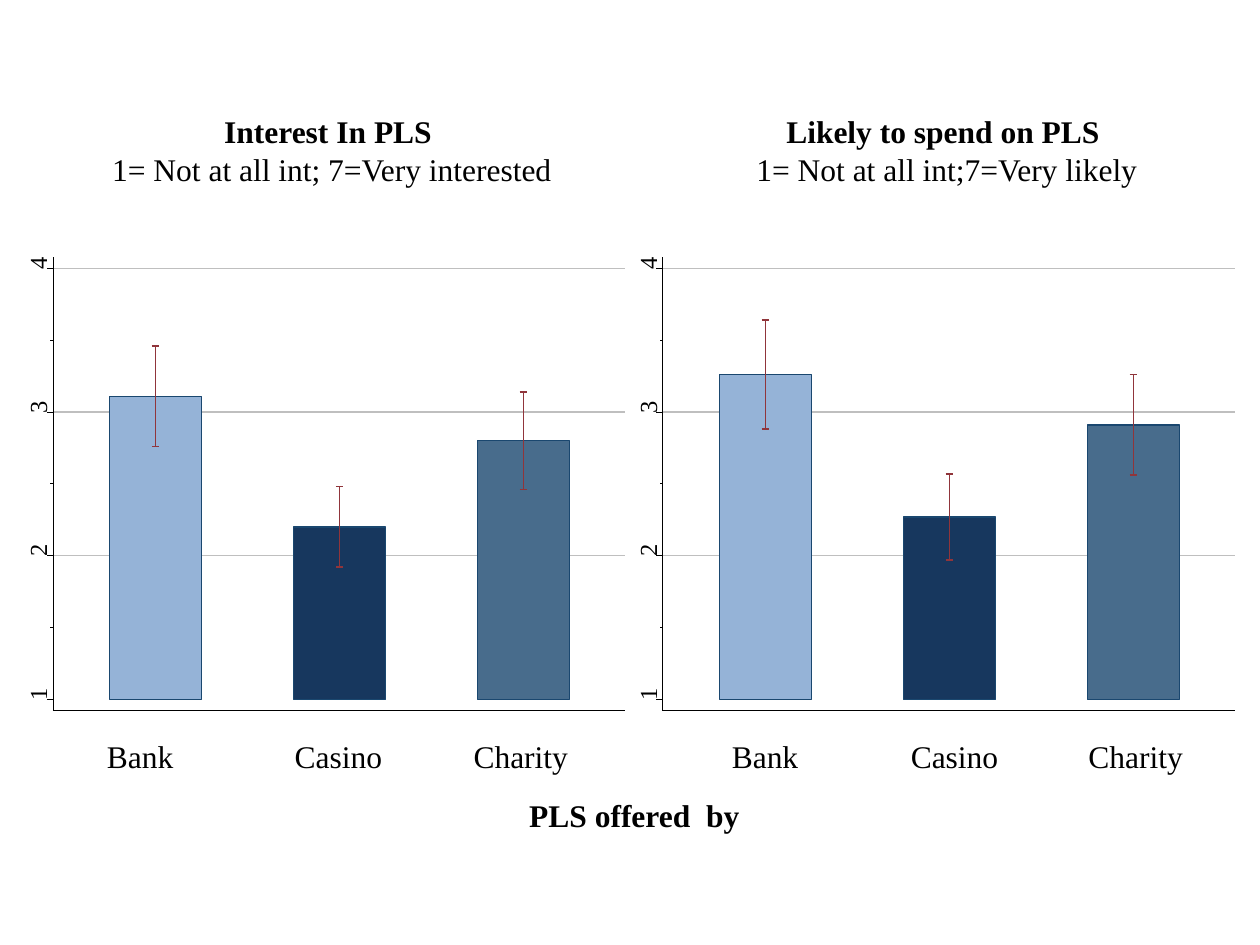
from pptx import Presentation
from pptx.dml.color import RGBColor
from pptx.enum import shapes, text
from pptx.oxml import xmlchemy
from pptx.util import Inches, Pt

COLORS = {
    "background": "FFFFFF", "text": "000000", "axis": "000000", "grid": "BFBFBF",
    "outline": "1A476F", "error": "90353B",
    "Bank": "95B3D7", "Casino": "17375E", "Charity": "486C8C",
}
FONT = "Times New Roman"
PLOT_TOP, PLOT_W, PLOT_H = 2.04, 4.54, 3.6
BASE, UNIT = 5.55, 1.14
BAR_INSET, BAR_STEP, BAR_W = 0.45, 1.46, 0.73
CAP = 0.03
THIN, MEDIUM = 0.38, 0.88

PANELS = [
    {
        "left": 5.26,
        "title": ("Likely to spend on PLS ", "1= Not at all int;7=Very likely"),
        "title_left": 5.39,
        "bars": [("Bank", 3.26, 0.38, 5.71, 1.02),
                 ("Casino", 2.27, 0.3, 7.13, 1.02),
                 ("Charity", 2.91, 0.35, 8.54, 1.18)],
    },
    {
        "left": 0.42,
        "title": ("Interest In PLS ", "1= Not at all int; 7=Very interested"),
        "title_left": 0.51,
        "bars": [("Bank", 3.11, 0.35, 0.75, 1.02),
                 ("Casino", 2.2, 0.28, 2.24, 1.02),
                 ("Charity", 2.8, 0.34, 3.66, 1.18)],
    },
]


def rgb(name):
    return RGBColor.from_string(COLORS[name])


def y_at(value):
    return BASE - UNIT * (value - 1)


def add_rect(s, x, y, w, h, fill, line, width):
    sp = s.shapes.add_shape(shapes.MSO_SHAPE.RECTANGLE,
                            Inches(x), Inches(y), Inches(w), Inches(h))
    sp.shadow.inherit = False
    sp.fill.solid()
    sp.fill.fore_color.rgb = rgb(fill)
    sp.line.color.rgb = rgb(line)
    sp.line.width = Pt(width)


def add_line(s, x1, y1, x2, y2, color, width):
    line = s.shapes.add_connector(shapes.MSO_CONNECTOR.STRAIGHT,
                                  Inches(x1), Inches(y1), Inches(x2), Inches(y2))
    line.line.color.rgb = rgb(color)
    line.line.width = Pt(width)
    sp_pr = line._element.spPr
    sp_pr.append(xmlchemy.OxmlElement("a:effectLst"))


def add_text(s, x, y, w, h, lines, size=18, bold_first=False, centered=False):
    sp = s.shapes.add_textbox(Inches(x), Inches(y), Inches(w), Inches(h))
    tf = sp.text_frame
    tf.word_wrap = True
    tf.auto_size = text.MSO_AUTO_SIZE.SHAPE_TO_FIT_TEXT
    for i, content in enumerate(lines):
        p = tf.add_paragraph() if i else tf.paragraphs[0]
        p.add_run().text = content
        p.font.name = FONT
        p.font.size = Pt(size)
        p.font.color.rgb = rgb("text")
        p.font.bold = bold_first and i == 0
        if centered:
            p.alignment = text.PP_ALIGN.CENTER
    return sp


def add_tick_label(s, x, value):
    sp = add_text(s, x - 0.18, y_at(value) - 0.15, 0.1, 0.22, [str(value)], size=14)
    sp.rotation = 270
    tf = sp.text_frame
    tf.word_wrap = False
    tf.margin_left = tf.margin_right = tf.margin_top = tf.margin_bottom = 0


def add_error_bar(s, x, low, high):
    add_line(s, x, y_at(high), x, y_at(low), "error", MEDIUM)
    for value in (low, high):
        add_line(s, x - CAP, y_at(value), x + CAP, y_at(value), "error", MEDIUM)


def add_axes(s, x):
    bottom = PLOT_TOP + PLOT_H
    add_line(s, x, bottom, x, PLOT_TOP, "axis", THIN)
    for i in range(7):
        y = y_at(1 + i / 2)
        add_line(s, x, y, x - 0.02, y, "axis", THIN)
    for value in range(1, 5):
        add_line(s, x, y_at(value), x - 0.05, y_at(value), "axis", THIN)
        add_tick_label(s, x, value)
    add_line(s, x, bottom, x + PLOT_W, bottom, "axis", THIN)


def add_plot(s, panel):
    x = panel["left"]
    add_rect(s, x, PLOT_TOP, PLOT_W, PLOT_H, "background", "background", THIN)
    for value in (2, 3, 4):
        add_line(s, x, y_at(value), x + PLOT_W, y_at(value), "grid", MEDIUM)
    lefts = [x + BAR_INSET + BAR_STEP * i for i in range(len(panel["bars"]))]
    for left, (name, mean, *_) in zip(lefts, panel["bars"]):
        add_rect(s, left, y_at(mean), BAR_W, BASE - y_at(mean), name, "outline", 0)
    for left, (_, mean, error, *_) in zip(lefts, panel["bars"]):
        add_error_bar(s, left + BAR_W / 2, mean - error, mean + error)
    add_axes(s, x)


def add_labels(s, panel):
    add_text(s, panel["title_left"], 0.84, 4.25, 0.71, panel["title"],
             bold_first=True, centered=True)
    for name, _, _, left, width in panel["bars"]:
        add_text(s, left, 5.8, width, 0.4, [name])


def main():
    prs = Presentation()
    prs.slide_width, prs.slide_height = Inches(10), Inches(7.5)
    s = prs.slides.add_slide(prs.slide_layouts[6])
    for panel in PANELS:
        add_plot(s, panel)
    for panel in reversed(PANELS):
        add_labels(s, panel)
    add_text(s, 2.32, 6.27, 5.43, 0.4, ["PLS offered  by"],
             bold_first=True, centered=True)
    prs.save("out.pptx")


if __name__ == "__main__":
    main()
